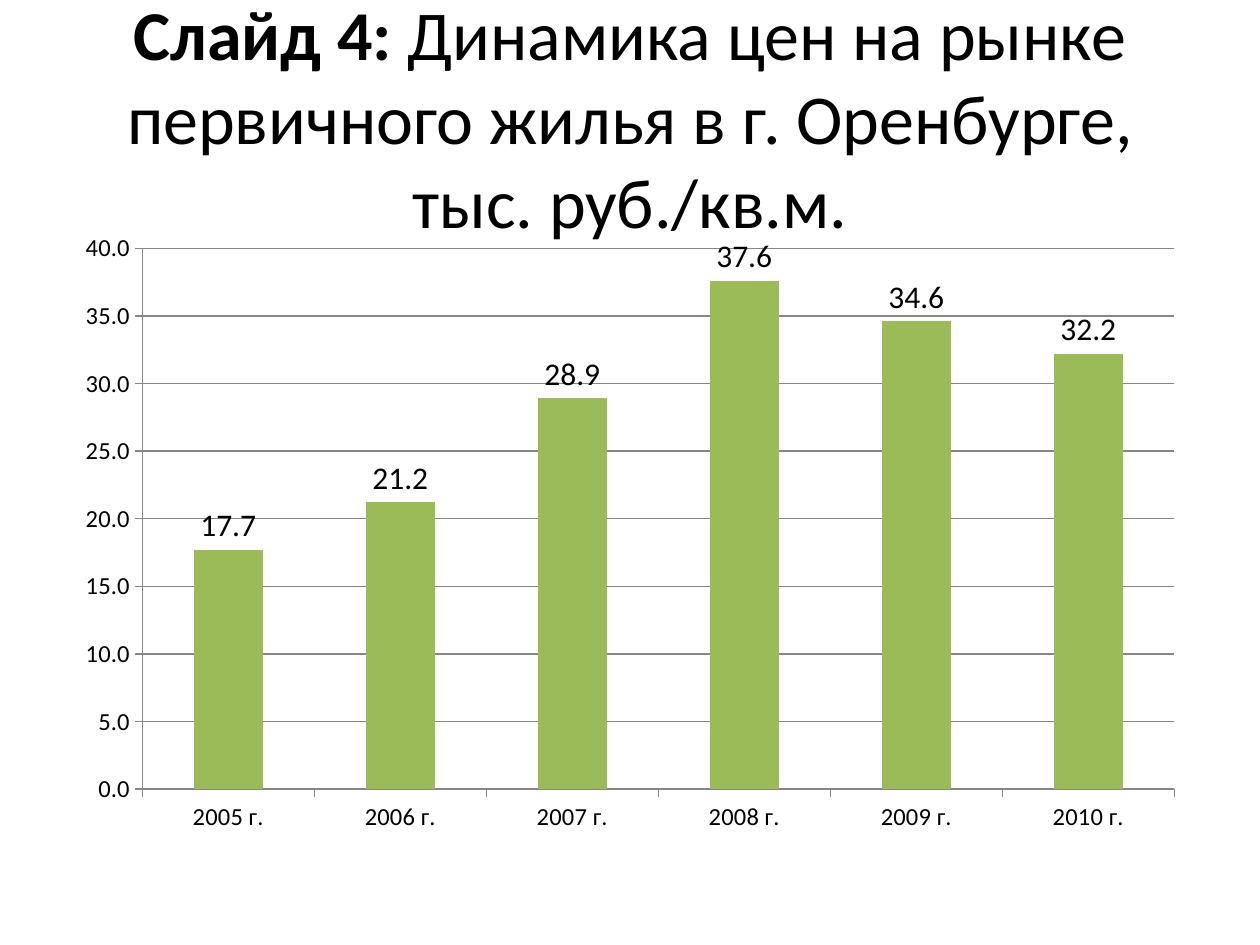
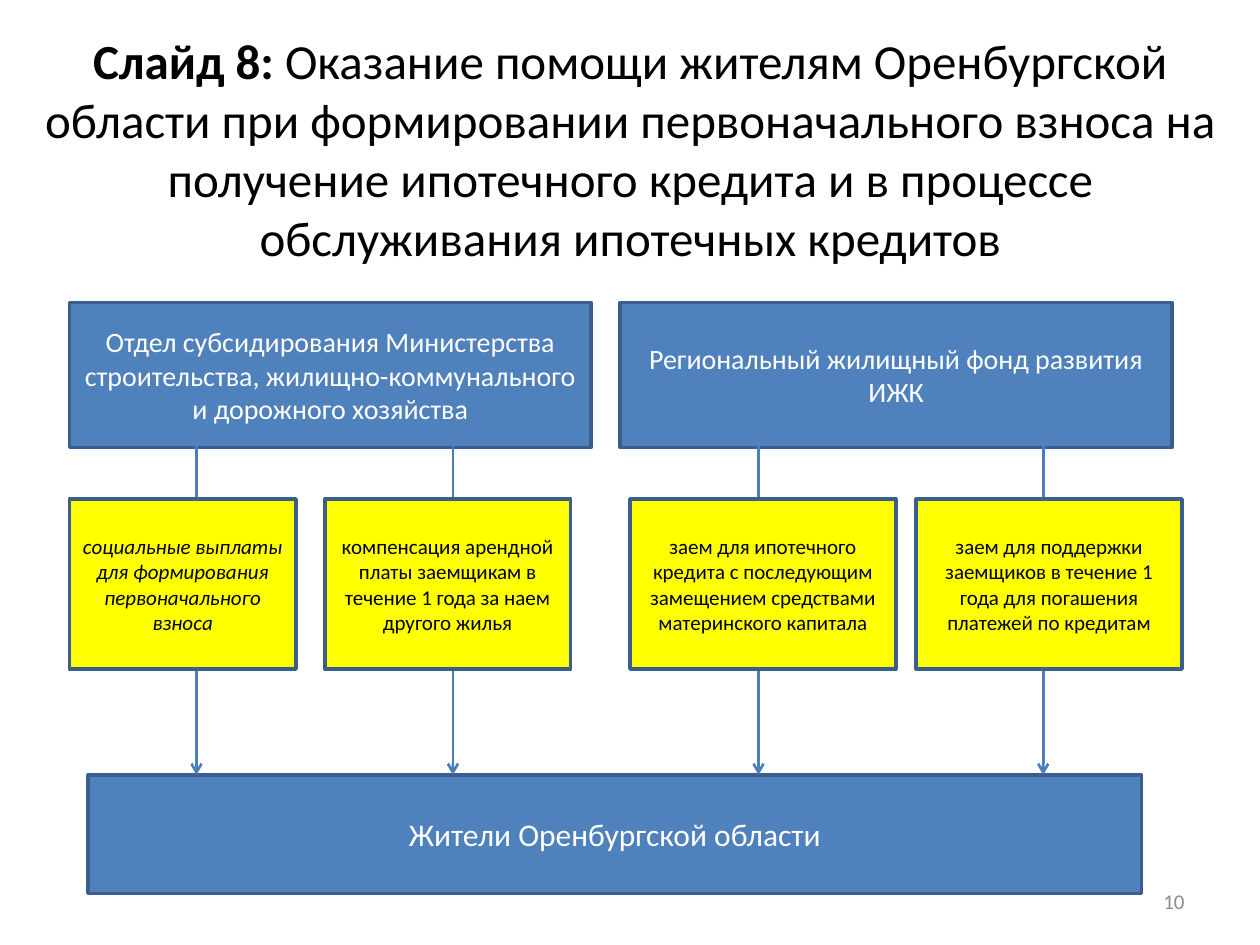
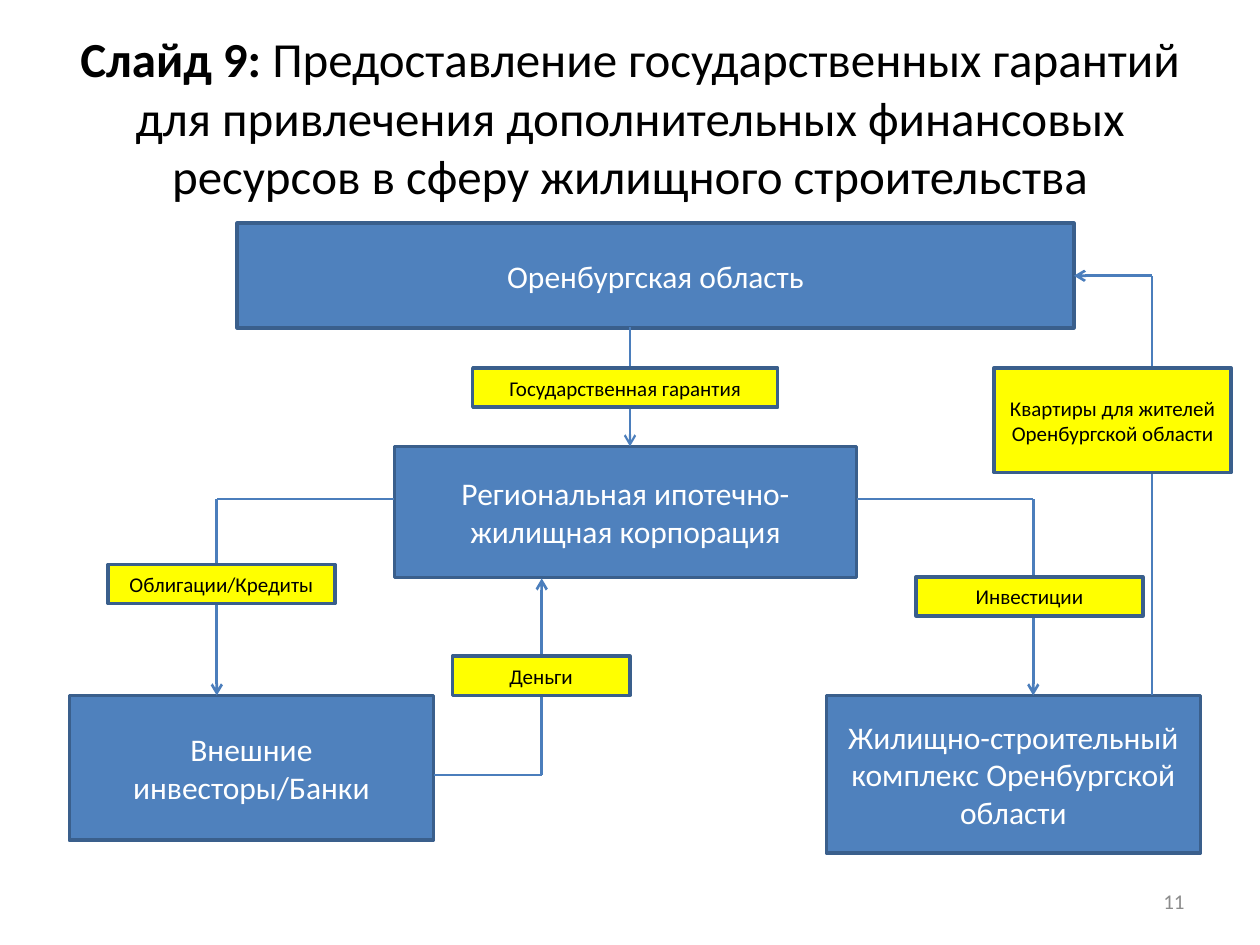
from itertools import pairwise

from lxml.etree import SubElement
from pptx import Presentation
from pptx.chart.data import CategoryChartData
from pptx.dml.color import RGBColor
from pptx.enum.chart import XL_CHART_TYPE as ChartType, XL_LABEL_POSITION as LabelPos
from pptx.enum.chart import XL_TICK_MARK as Tick
from pptx.enum.shapes import MSO_CONNECTOR as Connector, MSO_SHAPE as Shape
from pptx.enum.text import MSO_ANCHOR as Anchor, PP_ALIGN as Align
from pptx.oxml.ns import qn
from pptx.util import Cm, Pt

BLACK = RGBColor(0x00, 0x00, 0x00)
WHITE = RGBColor(0xFF, 0xFF, 0xFF)
GRAY = RGBColor(0x8C, 0x8C, 0x8C)
GRID = RGBColor(0x86, 0x86, 0x86)
BLUE = RGBColor(0x4F, 0x81, 0xBD)
BORDER = RGBColor(0x3A, 0x5F, 0x8C)
ARROW = RGBColor(0x4B, 0x7E, 0xBC)
YELLOW = RGBColor(0xFF, 0xFF, 0x00)
GREEN = RGBColor(0x9B, 0xBB, 0x59)

FONT = "Calibri"
TITLE_BOX = (1.27, 0.76, 22.86, 3.18)
NUMBER_BOX = (18.2, 17.66, 5.93, 1.01)


def style_font(font, size, color, **extra):
    for key, value in {"name": FONT, "size": Pt(size), **extra}.items():
        setattr(font, key, value)
    font.color.rgb = color


class Deck:
    def __init__(self):
        self.prs = Presentation()
        self.prs.slide_width, self.prs.slide_height = Cm(25.4), Cm(19.05)
        self.s = None

    def new_slide(self):
        self.s = self.prs.slides.add_slide(self.prs.slide_layouts[6])

    def fill_text(self, tf, runs, size, color, align=Align.CENTER):
        for key, value in {"word_wrap": True, "vertical_anchor": Anchor.MIDDLE}.items():
            setattr(tf, key, value)
        p = tf.paragraphs[0]
        p.alignment = align
        for text, extra in runs:
            r = p.add_run()
            r.text = text
            style_font(r.font, size, color, **extra)

    def text(self, box, runs, size, color, align=Align.CENTER):
        sp = self.s.shapes.add_textbox(*map(Cm, box))
        self.fill_text(sp.text_frame, runs, size, color, align)
        return sp

    def title(self, label, text, size=28, box=TITLE_BOX):
        runs = [(f"{label}: ", {"bold": True}), (text, {"bold": False})]
        return self.text(box, runs, size, BLACK)

    def number(self, value):
        self.text(NUMBER_BOX, [(str(value), {})], 12, GRAY, Align.RIGHT)

    def box(self, text, box, fill, color, size, **extra):
        sp = self.s.shapes.add_shape(Shape.RECTANGLE, *map(Cm, box))
        sp.shadow.inherit = False
        sp.fill.solid()
        sp.fill.fore_color.rgb = fill
        sp.line.color.rgb = BORDER
        sp.line.width = Pt(2)
        self.fill_text(sp.text_frame, [(text, extra)], size, color)

    def party(self, text, box, size=18):
        self.box(text, box, BLUE, WHITE, size)

    def note(self, text, box, **extra):
        self.box(text, box, YELLOW, BLACK, 12, **extra)

    def arrow(self, *points, width=1.5):
        for start, end in pairwise(points):
            c = self.s.shapes.add_connector(Connector.STRAIGHT, *map(Cm, start + end))
            c.line.color.rgb = ARROW
            c.line.width = Pt(width)
            sp_pr = c._element.spPr
            if end == points[-1]:
                SubElement(sp_pr.find(qn("a:ln")), qn("a:tailEnd"), type="arrow")
            SubElement(sp_pr, qn("a:effectLst"))

    def columns(self, box, cats, name, values):
        data = CategoryChartData(number_format="0.0")
        data.categories = cats
        data.add_series(name, values)
        chart = self.s.shapes.add_chart(
            ChartType.COLUMN_CLUSTERED, *map(Cm, box), data).chart
        chart.has_legend = chart.has_title = False
        style_font(chart.font, 10, BLACK)

        plot = chart.plots[0]
        plot.gap_width = 150
        plot.vary_by_categories = False
        fill = plot.series[0].format.fill
        fill.solid()
        fill.fore_color.rgb = GREEN

        plot.has_data_labels = True
        labels = plot.data_labels
        for key, value in {"show_value": True, "number_format": "0.0",
                           "number_format_is_linked": False,
                           "position": LabelPos.OUTSIDE_END}.items():
            setattr(labels, key, value)
        style_font(labels.font, 18, BLACK)

        for axis in (chart.category_axis, chart.value_axis):
            axis.major_tick_mark = Tick.OUTSIDE
            axis.format.line.color.rgb = GRID
            style_font(axis.tick_labels.font, 14, BLACK)
        for key, value in {"minimum_scale": 0, "maximum_scale": 40, "major_unit": 5,
                           "has_major_gridlines": True}.items():
            setattr(axis, key, value)
        axis.major_gridlines.format.line.color.rgb = GRID
        axis.tick_labels.number_format = "0.0"
        axis.tick_labels.number_format_is_linked = False


def price_slide(deck):
    deck.new_slide()
    deck.title("Слайд 4", "Динамика цен на рынке первичного жилья в г. Оренбурге, "
               "тыс. руб./кв.м.", size=40)
    deck.columns((1.27, 4.45, 22.86, 12.57),
                 [f"{year} г." for year in range(2005, 2011)],
                 "Series 1", [17.7, 21.2, 28.9, 37.6, 34.6, 32.2])


def support_slide(deck):
    deck.new_slide()
    title = deck.title(
        "Слайд 8", "Оказание помощи жителям Оренбургской области при формировании "
        "первоначального взноса на получение ипотечного кредита и в процессе "
        "обслуживания ипотечных кредитов", box=(0.4, 0.53, 24.61, 6.12))
    title.text_frame.margin_bottom = Cm(1.32)
    deck.number(10)

    deck.party("Отдел субсидирования Министерства строительства, "
               "жилищно-коммунального и дорожного хозяйства",
               (1.4, 6.1, 10.52, 2.92), 16)
    deck.party("Региональный жилищный фонд развития ИЖК",
               (12.5, 6.1, 11.13, 2.92), 16)
    deck.party("Жители Оренбургской области", (1.78, 15.62, 21.23, 2.39))

    measures = [
        ("социальные выплаты для формирования первоначального взноса",
         1.4, 4.57, 3.96, {"italic": True}),
        ("компенсация арендной платы заемщикам в течение 1 года за наем другого жилья",
         6.55, 4.95, 9.13, {}),
        ("заем для ипотечного кредита с последующим замещением средствами "
         "материнского капитала", 12.7, 5.36, 15.29, {}),
        ("заем для поддержки заемщиков в течение 1 года для погашения платежей "
         "по кредитам", 18.47, 5.36, 21.03, {}),
    ]
    for text, left, width, arrow_x, extra in measures:
        deck.arrow((arrow_x, 9), (arrow_x, 15.62))
        deck.note(text, (left, 10.06, width, 3.43), **extra)


def guarantee_slide(deck):
    deck.new_slide()
    deck.title("Слайд 9", "Предоставление государственных гарантий для привлечения "
               "дополнительных финансовых ресурсов в сферу жилищного строительства")
    deck.number(11)

    for text, box in [
        ("Оренбургская область", (4.78, 4.5, 16.87, 2.11)),
        ("Региональная ипотечно-жилищная корпорация", (7.95, 9, 9.32, 2.64)),
        ("Внешние инвесторы/Банки", (1.4, 14.02, 7.34, 2.92)),
        ("Жилищно-строительный комплекс Оренбургской области",
         (16.66, 14.02, 7.54, 3.18)),
    ]:
        deck.party(text, box)

    deck.arrow((12.7, 6.6), (12.7, 9), width=1.25)
    deck.arrow((7.95, 10.06), (4.37, 10.06), (4.37, 14.02))
    deck.arrow((8.74, 15.62), (10.92, 15.62), (10.92, 11.66))
    deck.arrow((17.27, 10.06), (20.83, 10.06), (20.83, 14.02))
    deck.arrow((23.22, 14.02), (23.22, 5.56), (21.65, 5.56))

    for text, box in [
        ("Государственная гарантия", (9.53, 7.42, 6.15, 0.79)),
        ("Облигации/Кредиты", (2.18, 11.38, 4.57, 0.79)),
        ("Деньги", (9.12, 13.23, 3.58, 0.79)),
        ("Инвестиции", (18.47, 11.63, 4.57, 0.79)),
        ("Квартиры для жителей Оренбургской области", (20.04, 7.42, 4.78, 2.11)),
    ]:
        deck.note(text, box)


def main():
    deck = Deck()
    for build in (price_slide, support_slide, guarantee_slide):
        build(deck)
    deck.prs.save("out.pptx")


if __name__ == "__main__":
    main()
